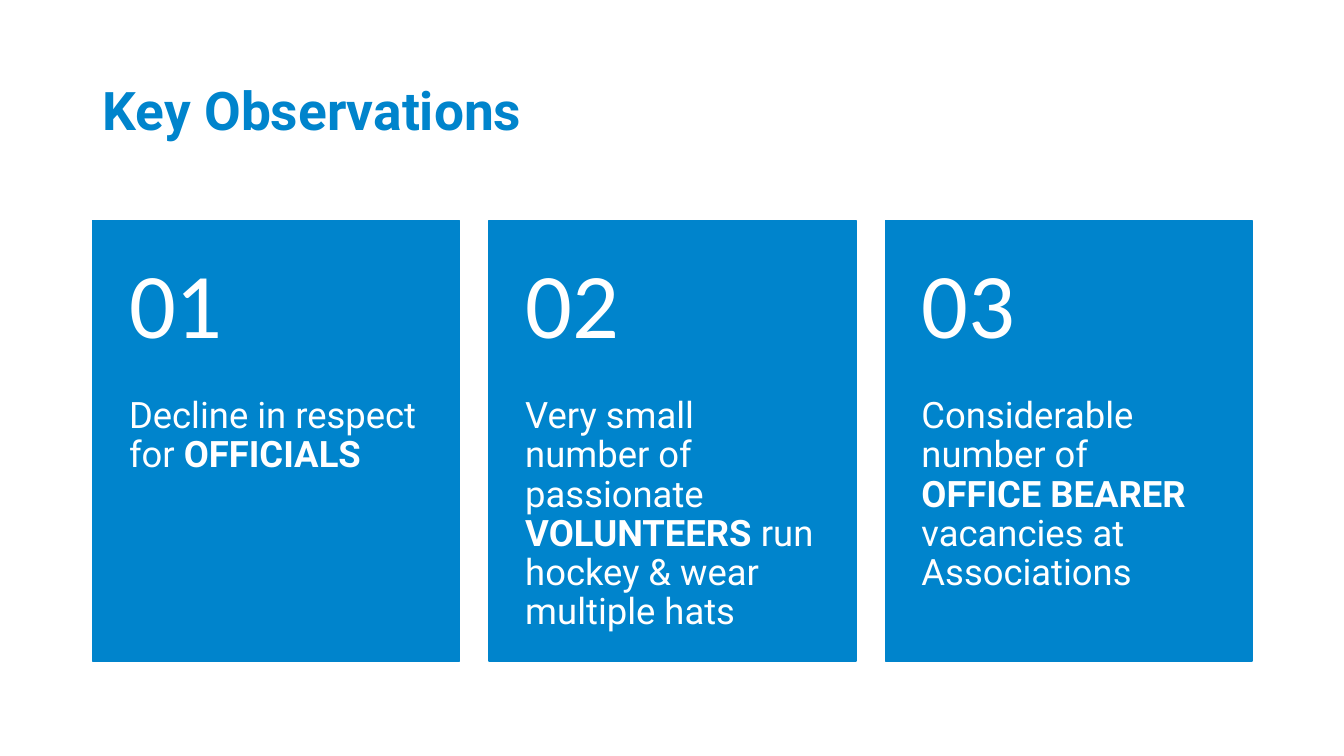
"""Build the Key Observations slide with three numbered cards."""
import dataclasses
import typing

import pptx
import pptx.dml.color
import pptx.enum.shapes
import pptx.enum.text
import pptx.shapes.autoshape
import pptx.slide
import pptx.util

Inches = pptx.util.Inches
Anchor = pptx.enum.text.MSO_ANCHOR


@dataclasses.dataclass(frozen=True)
class Theme:
    blue: str = "0084CC"
    white: str = "FFFFFF"
    text_font: str = "Roboto"
    number_font: str = "Calibri"
    title_size: int = 38
    body_size: int = 26
    number_size: int = 66
    line_spacing: float = 0.9


class Span(typing.NamedTuple):
    text: str
    bold: bool = False


class Card(typing.NamedTuple):
    number: str
    spans: tuple[Span, ...]


class Margins(typing.NamedTuple):
    left: float
    top: float
    right: float
    bottom: float


THEME = Theme()
CARDS = (
    Card("01", (Span("Decline in respect for "), Span("OFFICIALS", True))),
    Card("02", (Span("Very small number of passionate "), Span("VOLUNTEERS", True),
                Span(" run hockey & wear multiple hats"))),
    Card("03", (Span("Considerable number of "), Span("OFFICE BEARER", True),
                Span(" vacancies at Associations"))),
)
CARD_LEFT, CARD_TOP, CARD_WIDTH, CARD_HEIGHT = 0.92, 2.19, 3.64, 4.37
CARD_STEP = 3.93
NUMBER_HEIGHT = 1.75
TITLE_MARGINS = Margins(0.1, 0.05, 0.1, 0.05)
BODY_MARGINS = Margins(0.36, NUMBER_HEIGHT, 0.36, 0.36)
NUMBER_MARGINS = Margins(0.36, 0.18, 0.36, 0.18)


def color(value: str) -> pptx.dml.color.RGBColor:
    return pptx.dml.color.RGBColor.from_string(value)


def write(box: pptx.shapes.autoshape.Shape, text: tuple[Span, ...], *, size: int,
          font: str, fill: str, margins: Margins, anchor: Anchor) -> None:
    frame = box.text_frame
    frame.word_wrap = True
    frame.auto_size = pptx.enum.text.MSO_AUTO_SIZE.NONE
    frame.vertical_anchor = anchor
    for side, length in margins._asdict().items():
        setattr(frame, f"margin_{side}", Inches(length))
    para = frame.paragraphs[0]
    para.alignment = pptx.enum.text.PP_ALIGN.LEFT
    para.line_spacing = THEME.line_spacing
    for span in text:
        run = para.add_run()
        run.text = span.text
        run.font.name = font
        run.font.size = pptx.util.Pt(size)
        run.font.bold = span.bold
        run.font.color.rgb = color(fill)


def add_title(page: pptx.slide.Slide, text: str) -> None:
    box = page.shapes.add_textbox(Inches(0.92), Inches(0.4), Inches(11.5), Inches(1.45))
    write(box, (Span(text, True),), size=THEME.title_size, font=THEME.text_font,
          fill=THEME.blue, margins=TITLE_MARGINS, anchor=Anchor.MIDDLE)


def add_card(page: pptx.slide.Slide, card: Card, left: float) -> None:
    panel = page.shapes.add_shape(
        pptx.enum.shapes.MSO_SHAPE.RECTANGLE,
        Inches(left), Inches(CARD_TOP), Inches(CARD_WIDTH), Inches(CARD_HEIGHT))
    panel.shadow.inherit = False
    panel.fill.solid()
    panel.fill.fore_color.rgb = color(THEME.blue)
    panel.line.color.rgb = color(THEME.blue)
    panel.line.width = pptx.util.Pt(1)
    write(panel, card.spans, size=THEME.body_size, font=THEME.text_font,
          fill=THEME.white, margins=BODY_MARGINS, anchor=Anchor.TOP)
    number_box = page.shapes.add_textbox(
        Inches(left), Inches(CARD_TOP), Inches(CARD_WIDTH), Inches(NUMBER_HEIGHT))
    write(number_box, (Span(card.number),), size=THEME.number_size, font=THEME.number_font,
          fill=THEME.white, margins=NUMBER_MARGINS, anchor=Anchor.MIDDLE)


def main() -> None:
    deck = pptx.Presentation()
    deck.slide_width, deck.slide_height = Inches(13.33), Inches(7.5)
    page = deck.slides.add_slide(deck.slide_layouts[6])
    add_title(page, "Key Observations")
    for index, card in enumerate(CARDS):
        add_card(page, card, CARD_LEFT + index * CARD_STEP)
    deck.save("out.pptx")


if __name__ == "__main__":
    main()
